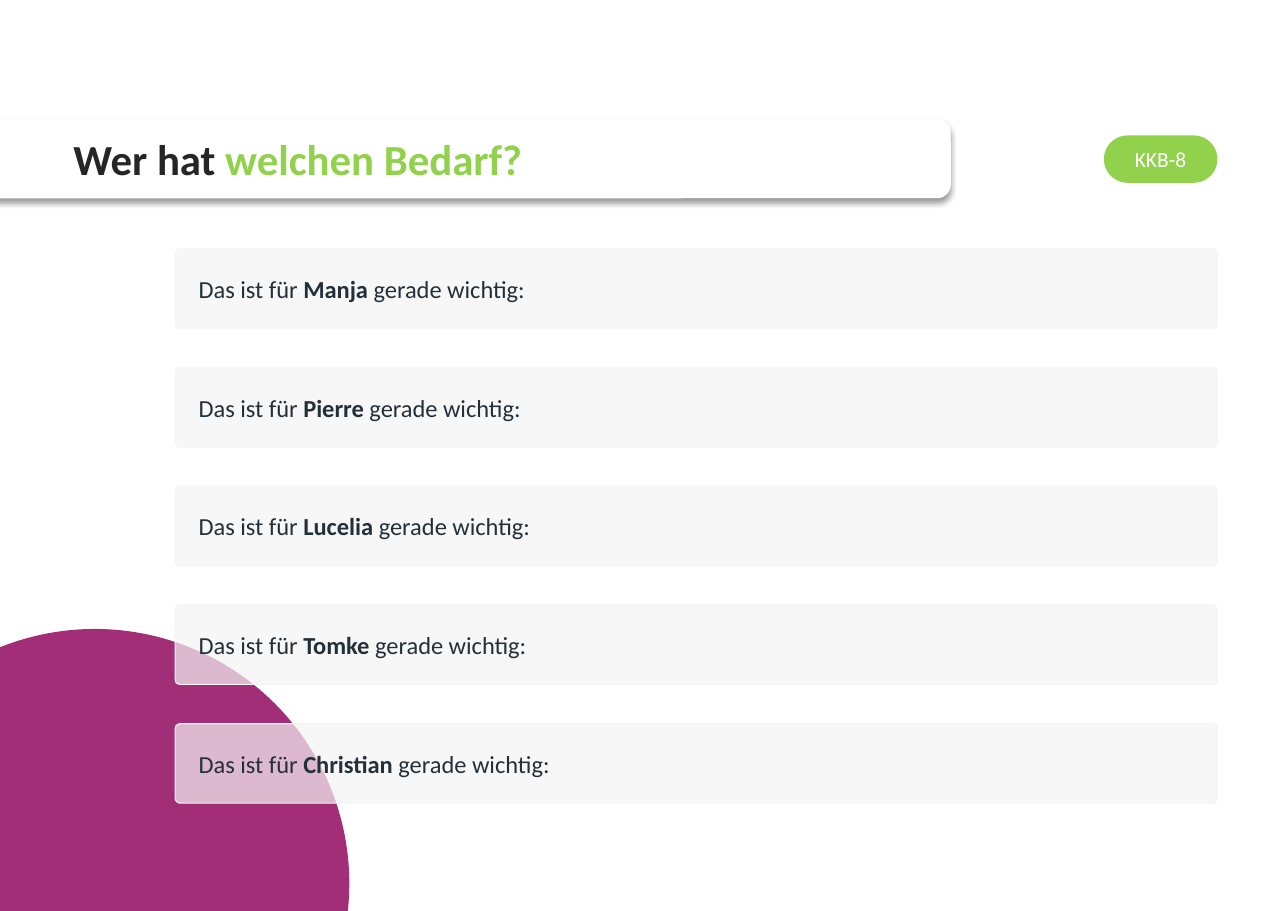
from math import acos, asin, cos, pi, sin

from lxml.etree import SubElement
from pptx import Presentation
from pptx.dml.color import RGBColor
from pptx.enum.shapes import MSO_SHAPE as Shape
from pptx.enum.text import MSO_ANCHOR as Anchor, PP_ALIGN as Align
from pptx.oxml.ns import qn
from pptx.util import Inches, Pt

# Content
NAMES = ["Manja", "Pierre", "Lucelia", "Tomke", "Christian"]
BEFORE, AFTER = "Das ist für ", " gerade wichtig:"
TITLE = [("Wer hat ", "262626", True), ("welchen Bedarf?", "91D14C", True)]
BADGE = [("KKB-8", "FFFFFF", False)]

FONT, INK = "Calibri", "243039"
GREEN, PURPLE, WHITE, GREY = "91D14C", "A32E78", "FFFFFF", "F5F5F5"

# Layout: left, top, width, height in percent of the slide
WIDTH, HEIGHT = Inches(11.69), Inches(8.27)
BAR_WIDTH, BAR_HEIGHT = 80.92, 8.71
TITLE_BAR = (-7.1, 13.06, BAR_WIDTH, BAR_HEIGHT)
BADGE_PILL = (85.71, 14.87, 8.81, 5.2)
FIRST_ROW = (13.6, 27.33, BAR_WIDTH, BAR_HEIGHT)
ROW_STEP = 13.03
CIRCLE_X, CIRCLE_Y, CIRCLE_RADIUS = 7.36, 96.98, 19.76


def across(percent):
    return round(WIDTH * percent / 100)


def down(percent):
    return round(HEIGHT * percent / 100)


def color(hex_string):
    return RGBColor.from_string(hex_string)


def paint(shape, fill):
    shape.shadow.inherit = False
    shape.fill.solid()
    shape.fill.fore_color.rgb = color(fill)
    shape.line.fill.background()


def set_alpha(parent, percent):
    SubElement(parent.find(qn("a:srgbClr")), qn("a:alpha"), val=str(percent * 1000))


def add_box(page, place, corner, fill, spans, size, margins, align=Align.LEFT):
    left, top, width, height = place
    box = page.shapes.add_shape(Shape.ROUNDED_RECTANGLE, across(left), down(top),
                                across(width), down(height))
    box.adjustments[0] = corner
    paint(box, fill)
    frame = box.text_frame
    frame.word_wrap = True
    frame.vertical_anchor = Anchor.MIDDLE
    (frame.margin_left, frame.margin_top,
     frame.margin_right, frame.margin_bottom) = map(Inches, margins)
    para = frame.paragraphs[0]
    para.alignment = align
    for text, ink, bold in spans:
        span = para.add_run()
        span.text = text
        span.font.name, span.font.size, span.font.bold = FONT, Pt(size), bold
        span.font.color.rgb = color(ink)
    return box


def add_corner_circle(page):
    """Circle cut off by the left and bottom edges of the slide."""
    x, y, radius = across(CIRCLE_X), down(CIRCLE_Y), across(CIRCLE_RADIUS)
    start = pi + acos(x / radius)
    end = 2 * pi + asin((HEIGHT - y) / radius)
    steps = 120
    angles = [start + (end - start) * i / steps for i in range(steps + 1)]
    arc = [(round(x + radius * cos(a)), round(y + radius * sin(a))) for a in angles]
    builder = page.shapes.build_freeform(0, HEIGHT)
    builder.add_line_segments(arc, close=True)
    paint(builder.convert_to_shape(), PURPLE)


def add_drop_shadow(box):
    effects = box._element.spPr.find(qn("a:effectLst"))
    shadow = SubElement(effects, qn("a:outerShdw"), blurRad=str(Pt(4)),
                        dist=str(Pt(3)), dir="5400000", rotWithShape="0")
    SubElement(shadow, qn("a:srgbClr"), val="000000")
    set_alpha(shadow, 40)


def main():
    deck = Presentation()
    deck.slide_width, deck.slide_height = WIDTH, HEIGHT
    page = deck.slides.add_slide(deck.slide_layouts[6])

    # Corner decoration, badge and title
    add_corner_circle(page)
    add_box(page, BADGE_PILL, 0.5, GREEN, BADGE, 14, (0, 0.05, 0, 0.05), Align.CENTER)
    title = add_box(page, TITLE_BAR, 0.17, WHITE, TITLE, 28, (1.46, 0.05, 0.1, 0.05))
    add_drop_shadow(title)

    # One translucent row per person
    left, top, width, height = FIRST_ROW
    for index, name in enumerate(NAMES):
        spans = [(BEFORE, INK, False), (name, INK, True), (AFTER, INK, False)]
        place = (left, top + index * ROW_STEP, width, height)
        row = add_box(page, place, 0.06, GREY, spans, 16, (0.2, 0, 0.12, 0))
        set_alpha(row._element.spPr.find(qn("a:solidFill")), 70)
        row.line.color.rgb = color(GREY)
        row.line.width = Pt(0.75)

    deck.save("out.pptx")


if __name__ == "__main__":
    main()
